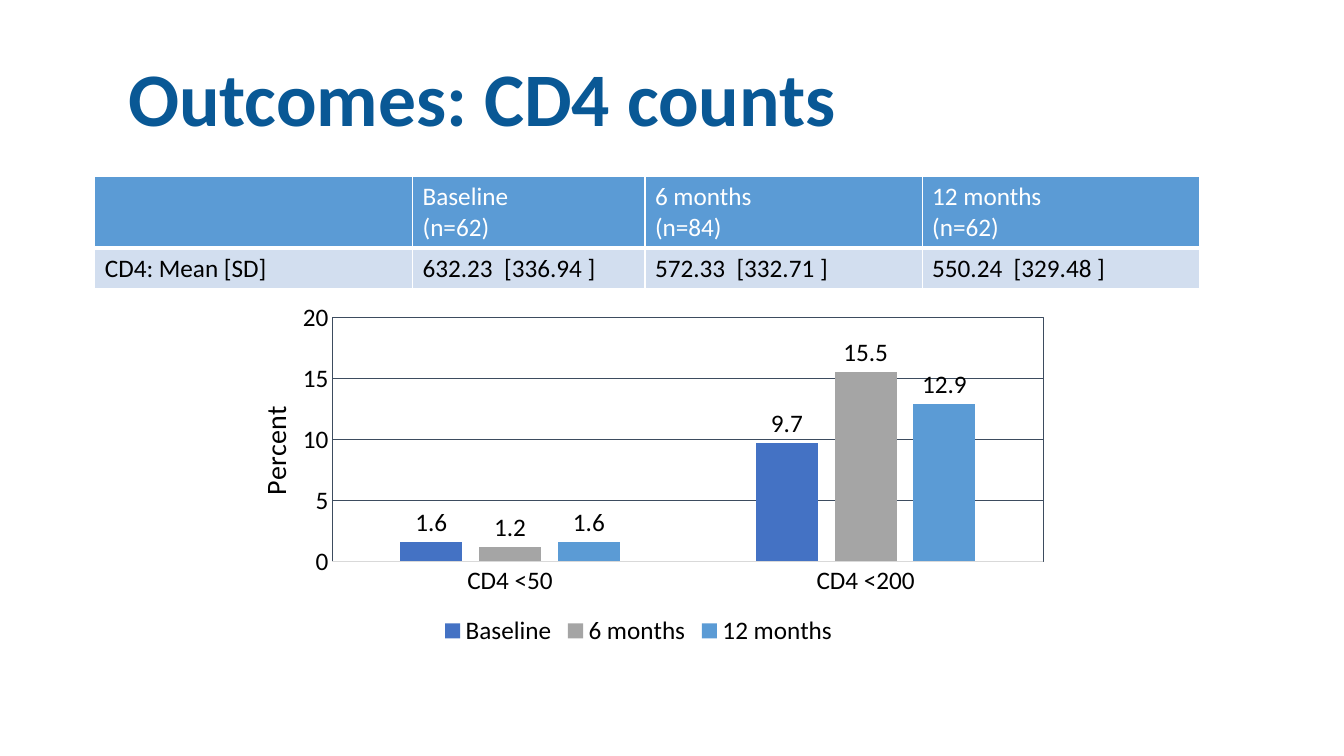
from dataclasses import dataclass

from lxml import etree
from pptx import Presentation
from pptx.chart.data import CategoryChartData
from pptx.dml.color import RGBColor
from pptx.enum.chart import XL_CHART_TYPE, XL_LABEL_POSITION, XL_LEGEND_POSITION, XL_TICK_MARK
from pptx.enum.text import MSO_ANCHOR, MSO_AUTO_SIZE, PP_ALIGN
from pptx.oxml.ns import qn
from pptx.util import Pt

COLUMNS = XL_CHART_TYPE.COLUMN_CLUSTERED
OUTSIDE_END = XL_LABEL_POSITION.OUTSIDE_END
BOTTOM = XL_LEGEND_POSITION.BOTTOM
NO_TICK = XL_TICK_MARK.NONE
MIDDLE = MSO_ANCHOR.MIDDLE
NO_FIT = MSO_AUTO_SIZE.NONE
LEFT = PP_ALIGN.LEFT

HEADING = "Outcomes: CD4 counts"
SUMMARY = [
    ["", "Baseline\n(n=62)", "6 months\n(n=84)", "12 months\n(n=62)"],
    ["CD4: Mean [SD]", "632.23  [336.94 ]", "572.33  [332.71 ]", "550.24  [329.48 ]"],
]
THRESHOLDS = ["CD4 <50", "CD4 <200"]
VISITS = [
    ("Baseline", (1.6, 9.7), "4472C4"),
    ("6 months", (1.2, 15.5), "A5A5A5"),
    ("12 months", (1.6, 12.9), "5B9BD5"),
]
PERCENT = "Percent"

SLIDE_SIZE = (960, 540)
HEADING_BOX = (84.24, 9.36, 792, 126.72)
SUMMARY_ORIGIN = (67.68, 126)
COLUMN_WIDTHS = (227, 166, 198, 198)
ROW_HEIGHTS = (50.4, 29.2)
CHART_BOX = (154.8, 210.24, 602.64, 254.88)
PLOT_LAYOUT = {"x": 0.137, "y": 0.064, "w": 0.843, "h": 0.684}
PERCENT_LAYOUT = {"x": 0.04, "y": 0.3}


@dataclass(frozen=True)
class Theme:
    font: str = "Calibri"
    heading: str = "095895"
    header_fill: str = "5B9BD5"
    body_fill: str = "D2DEEF"
    white: str = "FFFFFF"
    black: str = "000000"
    grid: str = "3D4C5F"
    baseline: str = "D9D9D9"
    heading_size: int = 54
    text_size: int = 18
    axis_title_size: int = 20
    line_width: float = 0.75


THEME = Theme()


def style_font(font, size, color, bold=False):
    font.name = THEME.font
    font.size = Pt(size)
    font.bold = bold
    font.color.rgb = RGBColor.from_string(color)


def style_line(line, color):
    line.color.rgb = RGBColor.from_string(color)
    line.width = Pt(THEME.line_width)


def add_outline(parent, tag, color, width):
    outline = etree.SubElement(parent, qn(tag), w=str(int(Pt(width))))
    fill = etree.SubElement(outline, qn("a:solidFill"))
    etree.SubElement(fill, qn("a:srgbClr"), val=color)


def set_layout(element, fractions, inner=False):
    layout = element.find(qn("c:layout"))
    if layout is None:
        layout = etree.Element(qn("c:layout"))
        element.insert(0, layout)
    manual = etree.SubElement(layout, qn("c:manualLayout"))
    if inner:
        etree.SubElement(manual, qn("c:layoutTarget"), val="inner")
    for side in ("x", "y"):
        etree.SubElement(manual, qn(f"c:{side}Mode"), val="edge")
    for side, fraction in fractions.items():
        etree.SubElement(manual, qn(f"c:{side}"), val=str(fraction))


def add_heading(slide):
    heading = slide.shapes.title
    heading.left, heading.top, heading.width, heading.height = map(Pt, HEADING_BOX)
    frame = heading.text_frame
    frame.text = HEADING
    frame.auto_size = NO_FIT
    frame.vertical_anchor = MIDDLE
    line = frame.paragraphs[0]
    line.alignment = LEFT
    line.line_spacing = 0.9
    style_font(line.font, THEME.heading_size, THEME.heading, bold=True)


def add_summary(slide):
    size = (sum(COLUMN_WIDTHS), sum(ROW_HEIGHTS))
    summary = slide.shapes.add_table(
        len(SUMMARY), len(COLUMN_WIDTHS), *map(Pt, SUMMARY_ORIGIN + size)
    ).table
    for column, width in zip(summary.columns, COLUMN_WIDTHS):
        column.width = Pt(width)
    for index, (row, height, texts) in enumerate(zip(summary.rows, ROW_HEIGHTS, SUMMARY)):
        row.height = Pt(height)
        header = index == 0
        ink = THEME.white if header else THEME.black
        for cell, text in zip(row.cells, texts):
            cell.text = text
            for line in cell.text_frame.paragraphs:
                style_font(line.font, THEME.text_size, ink)
            properties = cell._tc.get_or_add_tcPr()
            for side in "LRTB":
                thick = side == ("B" if header else "T")
                add_outline(properties, f"a:ln{side}", THEME.white, 3 if thick else 1)
            cell.fill.solid()
            cell.fill.fore_color.rgb = RGBColor.from_string(
                THEME.header_fill if header else THEME.body_fill
            )


def add_chart(slide):
    counts = CategoryChartData()
    counts.categories = THRESHOLDS
    for name, values, _ in VISITS:
        counts.add_series(name, values)
    chart = slide.shapes.add_chart(COLUMNS, *map(Pt, CHART_BOX), counts).chart
    style_font(chart.font, THEME.text_size, THEME.black)
    chart.has_title = False
    chart.has_legend = True
    chart.legend.position = BOTTOM
    chart.legend.include_in_layout = False
    style_font(chart.legend.font, THEME.text_size, THEME.black)

    plot = chart.plots[0]
    plot.gap_width = 219
    plot.overlap = -27
    plot.vary_by_categories = False
    for series, (_, _, color) in zip(plot.series, VISITS):
        series.format.fill.solid()
        series.format.fill.fore_color.rgb = RGBColor.from_string(color)
        labels = series.data_labels
        labels.show_value = True
        labels.position = OUTSIDE_END
        style_font(labels.font, THEME.text_size, THEME.black)

    for axis in (chart.category_axis, chart.value_axis):
        axis.major_tick_mark = axis.minor_tick_mark = NO_TICK
        style_font(axis.tick_labels.font, THEME.text_size, THEME.black)
    style_line(chart.category_axis.format.line, THEME.baseline)

    percent = chart.value_axis
    percent.minimum_scale, percent.maximum_scale, percent.major_unit = 0, 20, 5
    percent.format.line.fill.background()
    style_line(percent.major_gridlines.format.line, THEME.grid)
    label = percent.axis_title
    label.text_frame.text = PERCENT
    style_font(label.text_frame.paragraphs[0].font, THEME.axis_title_size, THEME.black)
    title = percent._element.find(qn("c:title"))
    title.find(".//" + qn("a:bodyPr")).set("rot", "-5400000")
    set_layout(title, PERCENT_LAYOUT)

    area = chart._chartSpace.find(".//" + qn("c:plotArea"))
    set_layout(area, PLOT_LAYOUT, inner=True)
    frame = etree.SubElement(area, qn("c:spPr"))
    etree.SubElement(frame, qn("a:noFill"))
    add_outline(frame, "a:ln", THEME.grid, THEME.line_width)


def main():
    deck = Presentation()
    deck.slide_width, deck.slide_height = map(Pt, SLIDE_SIZE)
    slide = deck.slides.add_slide(deck.slide_layouts[5])
    add_heading(slide)
    add_summary(slide)
    add_chart(slide)
    deck.save("out.pptx")


if __name__ == "__main__":
    main()
